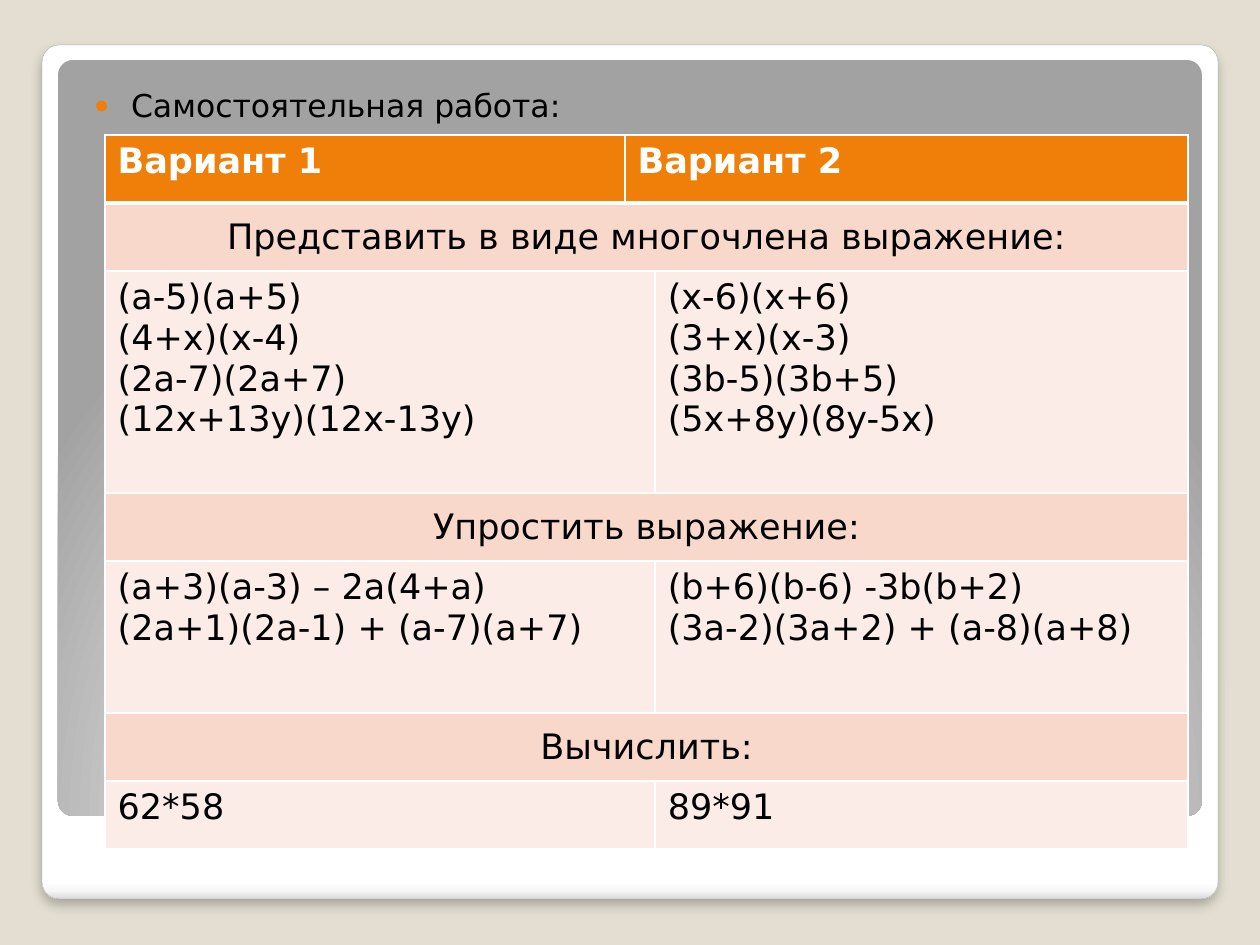
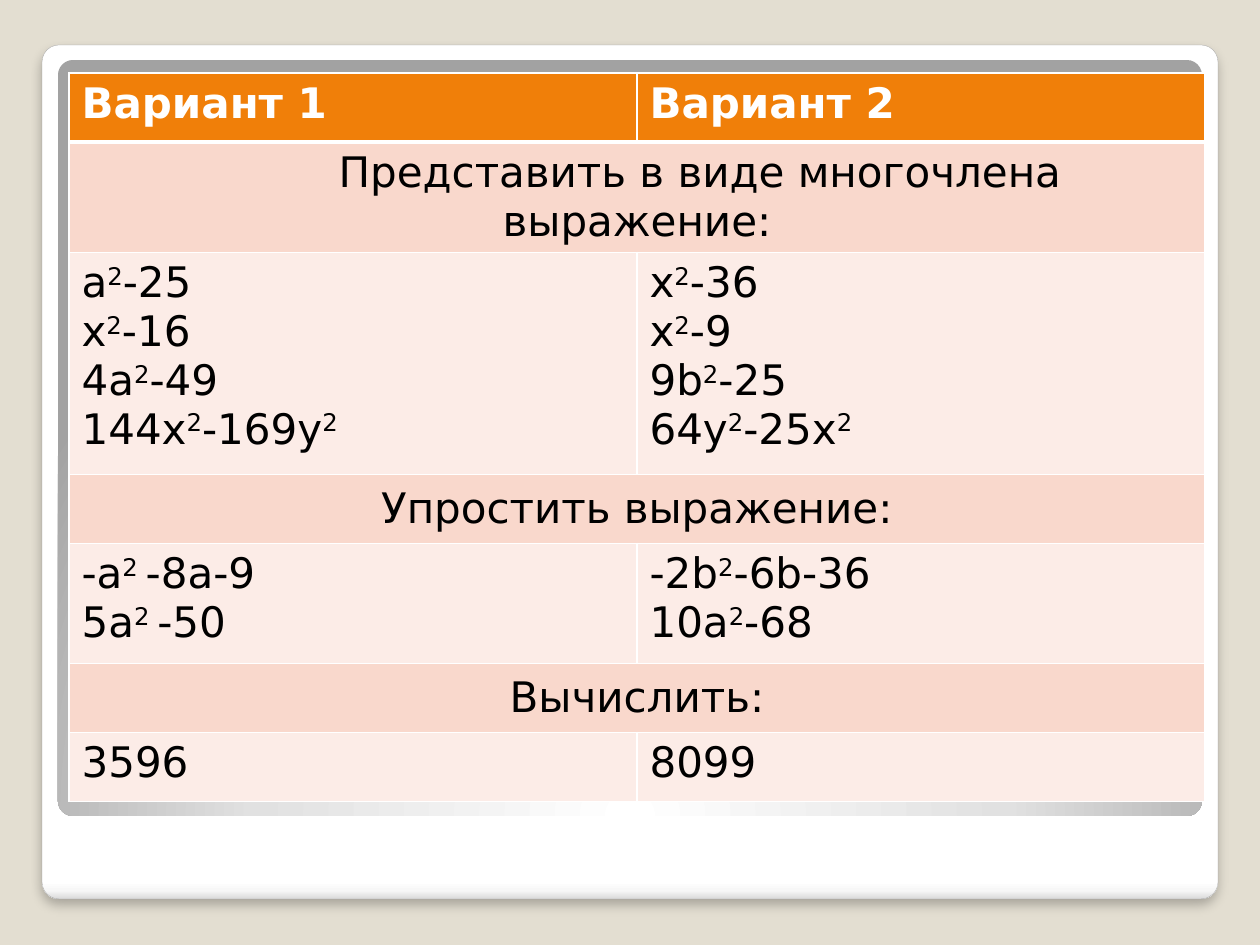
import pptx
import pptx.dml.color
import pptx.enum.shapes
import pptx.enum.text
import pptx.oxml
import pptx.oxml.ns
import pptx.util

EMU_PER_PX = 914400 / 126
FONT = "DejaVu Sans"
COLORS = {
    "background": "E3DED1",
    "accent": "F07F09",
    "heading": "F9D8CC",
    "answer": "FCECE7",
    "white": "FFFFFF",
    "black": "000000",
    "outline": "A4A4A4",
}
ROW_STYLES = {
    "header": {"fill": "accent", "text": "white", "bold": True},
    "heading": {"fill": "heading", "text": "black", "bold": False},
    "answer": {"fill": "answer", "text": "black", "bold": False},
}
CARD_STOPS = [(0, "FFFFFF"), (98, "FFFFFF"), (99, "F7F7F7"), (100, "DADADA")]
PANEL_STOPS = [(0, "FFFFFF"), (55, "E1E1E1"), (100, "A2A2A2")]
CARD_DIRECTION = '<a:lin ang="5400000" scaled="0"/>'
PANEL_DIRECTION = ('<a:path path="circle">'
                   '<a:fillToRect l="50000" t="175000" r="50000" b="-75000"/></a:path>')

INTRO = "Самостоятельная работа:"
VARIANTS = ["Вариант 1", "Вариант 2"]
HEADINGS = ["Представить в виде многочлена выражение:", "Упростить выражение:", "Вычислить:"]

# One (variant 1, variant 2) pair per heading; text between bars is superscript.
TASKS = {
    "answers": [
        (["(a-5)(a+5)", "(4+x)(x-4)", "(2a-7)(2a+7)", "(12x+13y)(12x-13y)"],
         ["(x-6)(x+6)", "(3+x)(x-3)", "(3b-5)(3b+5)", "(5x+8y)(8y-5x)"]),
        (["(a+3)(a-3) – 2a(4+a)", "(2a+1)(2a-1) + (a-7)(a+7)"],
         ["(b+6)(b-6) -3b(b+2)", "(3a-2)(3a+2) + (a-8)(a+8)"]),
        (["62*58"], ["89*91"]),
    ],
    "position": (105, 135),
    "columns": [520, 18, 533],
    "row_height": 68,
    "answer_heights": [222, 152, 68],
    "spans": {"header": [1, 2], "heading": [3], "answer": [2, 1]},
    "size": 20,
    "first_heading_indent": 0,
}
SOLUTIONS = {
    "answers": [
        (["a|2|-25", "x|2|-16", "4a|2|-49", "144x|2|-169y|2"],
         ["x|2|-36", "x|2|-9", "9b|2|-25", "64y|2|-25x|2"]),
        (["-a|2 |-8a-9", "5a|2 |-50"], ["-2b|2|-6b-36", "10a|2|-68"]),
        (["3596"], ["8099"]),
    ],
    "position": (69, 73),
    "columns": [568, 568],
    "row_height": 69,
    "answer_heights": [222, 120, 69],
    "spans": {"header": [1, 1], "heading": [2], "answer": [1, 1]},
    "size": 24,
    "first_heading_indent": 126,
}


def px(length):
    return pptx.util.Emu(round(length * EMU_PER_PX))


def color(name):
    return pptx.dml.color.RGBColor.from_string(COLORS[name])


def xml(tag, attributes="", content=""):
    namespace = pptx.oxml.ns.nsdecls("a")
    return pptx.oxml.parse_xml(f"<a:{tag} {namespace} {attributes}>{content}</a:{tag}>")


def solid(name):
    return f'<a:solidFill><a:srgbClr val="{COLORS[name]}"/></a:solidFill>'


def add_run(paragraph, text, size, color_name, bold=False):
    run = paragraph.add_run()
    run.text = text
    run.font.name = FONT
    run.font.size = pptx.util.Pt(size)
    run.font.bold = bold
    run.font.color.rgb = color(color_name)
    return run


def add_gradient_card(slide, box, stops, direction):
    shape = slide.shapes.add_shape(
        pptx.enum.shapes.MSO_SHAPE.ROUNDED_RECTANGLE, *map(px, box))
    shape.adjustments[0] = 0.02
    shape.shadow.inherit = False
    shape.line.fill.background()
    shape.fill.background()
    stop_list = "".join(f'<a:gs pos="{position * 1000}"><a:srgbClr val="{value}"/></a:gs>'
                        for position, value in stops)
    gradient = xml("gradFill", 'rotWithShape="1"', f"<a:gsLst>{stop_list}</a:gsLst>{direction}")
    properties = shape.element.spPr
    properties.replace(properties.find(pptx.oxml.ns.qn("a:noFill")), gradient)
    return shape


def move_frame_to_master(presentation, slide):
    """Draw the card and its panel, then put them behind everything on the master."""
    card = add_gradient_card(slide, (42, 45, 1176, 854), CARD_STOPS, CARD_DIRECTION)
    card.line.color.rgb = color("outline")
    card.line.width = pptx.util.Pt(0.16)
    effects = card.element.spPr.find(pptx.oxml.ns.qn("a:effectLst"))
    effects.append(xml("outerShdw", 'blurRad="76200" dist="50800" dir="5400000" rotWithShape="0"',
                       f'<a:srgbClr val="{COLORS["black"]}"><a:alpha val="25000"/></a:srgbClr>'))
    panel = add_gradient_card(slide, (58, 60, 1144, 756), PANEL_STOPS, PANEL_DIRECTION)
    for index, shape in enumerate((card, panel), start=2):
        presentation.slide_master.shapes.element.insert(index, shape.element)


def fill_intro(body):
    body.left, body.top, body.width, body.height = map(px, (69, 73, 1128, 577))
    frame = body.text_frame
    frame.margin_left, frame.margin_top = px(25), px(13)
    frame.margin_right, frame.margin_bottom = px(13), px(6)
    frame.vertical_anchor = pptx.enum.text.MSO_ANCHOR.TOP
    paragraph = frame.paragraphs[0]
    paragraph.space_before = pptx.util.Pt(2.5)
    add_run(paragraph, INTRO, 18, "black")
    properties = paragraph._p.get_or_add_pPr()
    properties.set("marL", str(px(37)))
    properties.set("indent", str(px(-37)))
    properties.append(xml("buClr", "", f'<a:srgbClr val="{COLORS["accent"]}"/>'))
    properties.append(xml("buSzPct", 'val="80000"'))
    properties.append(xml("buChar", 'char="●"'))


def set_borders(cell, row_index):
    properties = cell._tc.get_or_add_tcPr()
    thick_side = {0: "B", 1: "T"}.get(row_index)
    for side in "LRTB":
        width = pptx.util.Pt(3 if side == thick_side else 1)
        properties.append(xml(f"ln{side}", f'w="{width}"', solid("white")))


def fill_cell(cell, lines, kind, size):
    style = ROW_STYLES[kind]
    frame = cell.text_frame
    for index, line in enumerate(lines):
        paragraph = frame.add_paragraph() if index else frame.paragraphs[0]
        for part_index, part in enumerate(line.split("|")):
            run = add_run(paragraph, part, size, style["text"], style["bold"])
            if part_index % 2:
                run._r.get_or_add_rPr().set("baseline", "30000")
        if kind == "heading":
            paragraph.alignment = pptx.enum.text.PP_ALIGN.CENTER
    if kind == "heading":
        cell.vertical_anchor = pptx.enum.text.MSO_ANCHOR.MIDDLE


def add_variant_table(slide, content):
    rows = [("header", content["row_height"], [[name] for name in VARIANTS])]
    for heading, answers, height in zip(HEADINGS, content["answers"], content["answer_heights"]):
        rows.append(("heading", content["row_height"], [[heading]]))
        rows.append(("answer", height, answers))

    columns = content["columns"]
    box = (*content["position"], sum(columns), sum(height for _, height, _ in rows))
    table = slide.shapes.add_table(len(rows), len(columns), *map(px, box)).table
    table.first_row = table.horz_banding = False
    for column, width in zip(table.columns, columns):
        column.width = px(width)

    for row_index, (kind, height, texts) in enumerate(rows):
        table.rows[row_index].height = px(height)
        for cell in table.rows[row_index].cells:
            set_borders(cell, row_index)
            cell.fill.solid()
            cell.fill.fore_color.rgb = color(ROW_STYLES[kind]["fill"])
        start = 0
        for lines, span in zip(texts, content["spans"][kind]):
            cell = table.cell(row_index, start)
            if span > 1:
                cell.merge(table.cell(row_index, start + span - 1))
            fill_cell(cell, lines, kind, content["size"])
            start += span

    if content["first_heading_indent"]:
        first_heading = table.cell(1, 0).text_frame.paragraphs[0]
        first_heading._p.get_or_add_pPr().set("indent", str(px(content["first_heading_indent"])))


def main():
    presentation = pptx.Presentation()
    presentation.slide_width, presentation.slide_height = px(1260), px(945)
    background = presentation.slide_master.background.fill
    background.solid()
    background.fore_color.rgb = color("background")

    task_slide = presentation.slides.add_slide(presentation.slide_layouts[1])
    move_frame_to_master(presentation, task_slide)
    title = task_slide.shapes.title.element
    title.getparent().remove(title)
    fill_intro(task_slide.placeholders[1])
    add_variant_table(task_slide, TASKS)

    solution_slide = presentation.slides.add_slide(presentation.slide_layouts[6])
    add_variant_table(solution_slide, SOLUTIONS)
    presentation.save("out.pptx")


if __name__ == "__main__":
    main()
